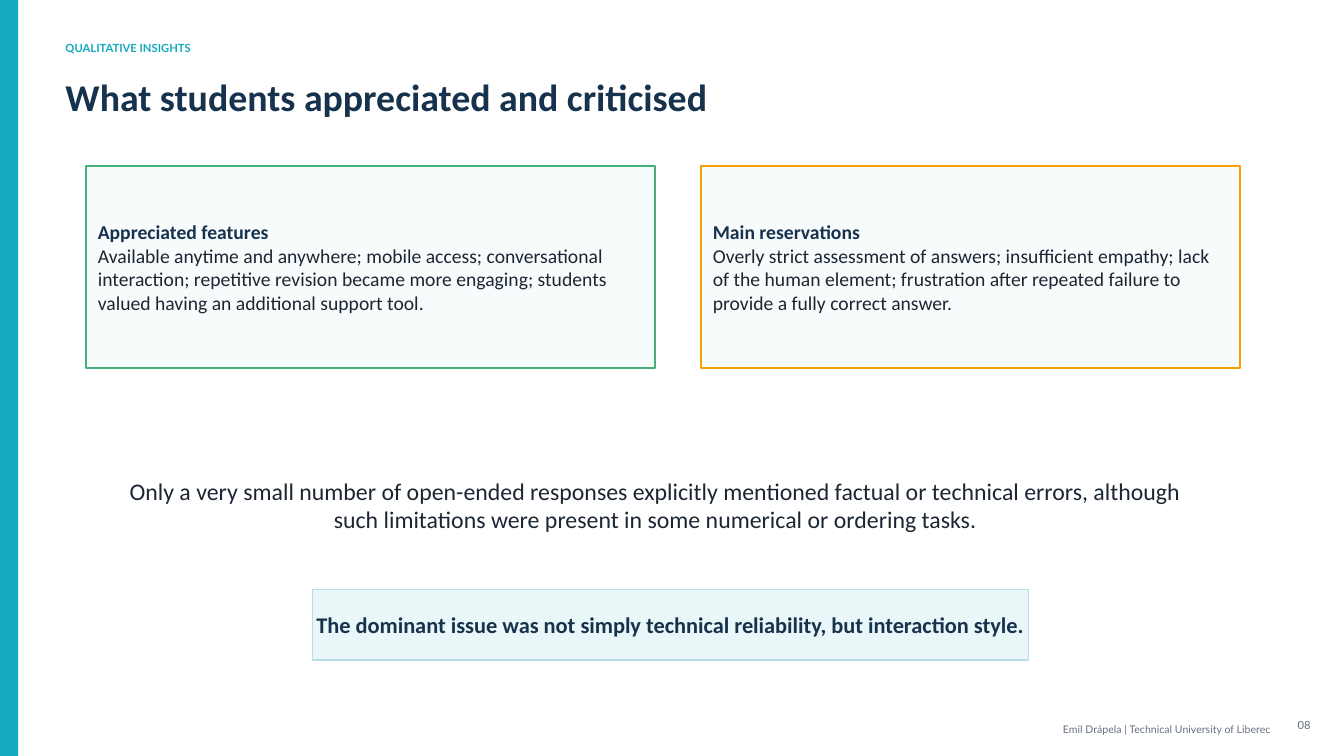
from dataclasses import dataclass

from pptx import Presentation
from pptx import util as u
from pptx.dml.color import RGBColor
from pptx.enum import shapes, text

CELL = 0.1  # inches per grid column and row
COLUMNS, ROWS = 133.3, 75


@dataclass(frozen=True)
class Theme:
    teal: str = "15AABF"
    navy: str = "17324D"
    ink: str = "1C2633"
    grey: str = "667085"
    green: str = "45B07A"
    amber: str = "F59F00"
    card: str = "F7FBFC"
    callout: str = "EAF7F9"
    callout_edge: str = "B9DDE6"
    body_font: str = "Calibri"
    label_font: str = "Lato"
    title_size: float = 27
    remark_size: float = 17
    callout_size: float = 16
    card_size: float = 14
    label_size: float = 8
    footer_size: float = 7.5


THEME = Theme()
LEFT, CENTER, RIGHT = text.PP_ALIGN.LEFT, text.PP_ALIGN.CENTER, text.PP_ALIGN.RIGHT


@dataclass(frozen=True)
class Box:
    """A region measured in grid columns and rows."""
    column: float
    row: float
    columns: float
    rows: float

    def inner(self, column, row, columns, rows):
        return Box(self.column + column, self.row + row, columns, rows)

    def lengths(self):
        cells = (self.column, self.row, self.columns, self.rows)
        return [u.Inches(round(cell * CELL, 2)) for cell in cells]


def style(size, color, bold=False, font=THEME.body_font):
    return {"size": u.Pt(size), "name": font, "bold": bold, "color": color}


def write(shape, spans, align=LEFT, left=0, right=0):
    """Fill a shape with one paragraph; each span starts a new line."""
    frame = shape.text_frame
    frame_format = {
        "word_wrap": True, "vertical_anchor": text.MSO_ANCHOR.MIDDLE,
        "margin_left": u.Inches(left), "margin_right": u.Inches(right),
        "margin_top": 0, "margin_bottom": 0,
    }
    for name, value in frame_format.items():
        setattr(frame, name, value)
    para = frame.paragraphs[0]
    para.alignment = align
    for index, (words, look) in enumerate(spans):
        if index:
            para.add_line_break()
        span = para.add_run()
        span.text = words
        for name, value in look.items():
            if name == "color":
                span.font.color.rgb = RGBColor.from_string(value)
            else:
                setattr(span.font, name, value)


def add_label(page, box, words, look, align=LEFT):
    write(page.shapes.add_textbox(*box.lengths()), [(words, look)], align)


def add_panel(page, box, fill, edge=None, width=1):
    panel = page.shapes.add_shape(shapes.MSO_SHAPE.RECTANGLE, *box.lengths())
    panel.shadow.inherit = False
    panel.fill.solid()
    panel.fill.fore_color.rgb = RGBColor.from_string(fill)
    if edge:
        panel.line.color.rgb = RGBColor.from_string(edge)
        panel.line.width = u.Pt(width)
    else:
        panel.line.fill.background()
    return panel


def add_header(page, box):
    add_label(page, box.inner(0, 0, 28, 2.5), "QUALITATIVE INSIGHTS",
              style(THEME.label_size, THEME.teal, True, THEME.label_font))
    add_label(page, box.inner(0, 3.3, box.columns, 5.5),
              "What students appreciated and criticised",
              style(THEME.title_size, THEME.navy, True))


def add_card(page, box, edge, heading, body, right):
    card = add_panel(page, box, THEME.card, edge, 1.2)
    write(card, [(heading, style(THEME.card_size, THEME.navy, True)),
                 (body, style(THEME.card_size, THEME.ink))], left=0.12, right=right)


def add_conclusion(page, box):
    add_label(page, box.inner(0, 0, box.columns, 7.2),
              "Only a very small number of open-ended responses explicitly mentioned "
              "factual or technical errors, although such limitations were present in "
              "some numerical or ordering tasks.",
              style(THEME.remark_size, THEME.ink), CENTER)
    callout = add_panel(page, box.inner(20, 12, 71, 7), THEME.callout, THEME.callout_edge)
    write(callout, [("The dominant issue was not simply technical reliability, "
                     "but interaction style.",
                     style(THEME.callout_size, THEME.navy, True))], CENTER)


def add_footer(page, box):
    add_label(page, box.inner(0, 0.4, 38.5, 2.2),
              "Emil Drápela | Technical University of Liberec",
              style(THEME.footer_size, THEME.grey, font=THEME.label_font), RIGHT)
    add_label(page, box.inner(box.columns - 3.5, 0, 3.5, 2.2), "08",
              style(THEME.label_size, THEME.grey, font=THEME.label_font), RIGHT)


def add_insights_slide(deck):
    page = deck.slides.add_slide(deck.slide_layouts[6])
    page.background.fill.solid()
    page.background.fill.fore_color.rgb = RGBColor.from_string("FFFFFF")

    # Side band and heading
    add_panel(page, Box(0, 0, 1.8, ROWS), THEME.teal)
    add_header(page, Box(6.5, 3.5, 87, 8.8))

    # Feedback cards
    add_card(page, Box(8.5, 16.5, 56.5, 20), THEME.green, "Appreciated features",
             "Available anytime and anywhere; mobile access; conversational "
             "interaction; repetitive revision became more engaging; students "
             "valued having an additional support tool.", right=0)
    add_card(page, Box(69.5, 16.5, 53.5, 20), THEME.amber, "Main reservations",
             "Overly strict assessment of answers; insufficient empathy; lack of "
             "the human element; frustration after repeated failure to provide a "
             "fully correct answer.", right=0.12)

    # Closing remark and footer
    add_conclusion(page, Box(11, 46.5, 108, 19))
    add_footer(page, Box(87.5, 70.8, 42.5, 2.6))


def main():
    deck = Presentation()
    deck.slide_width = u.Inches(COLUMNS * CELL)
    deck.slide_height = u.Inches(ROWS * CELL)
    add_insights_slide(deck)
    deck.save("out.pptx")


if __name__ == "__main__":
    main()
